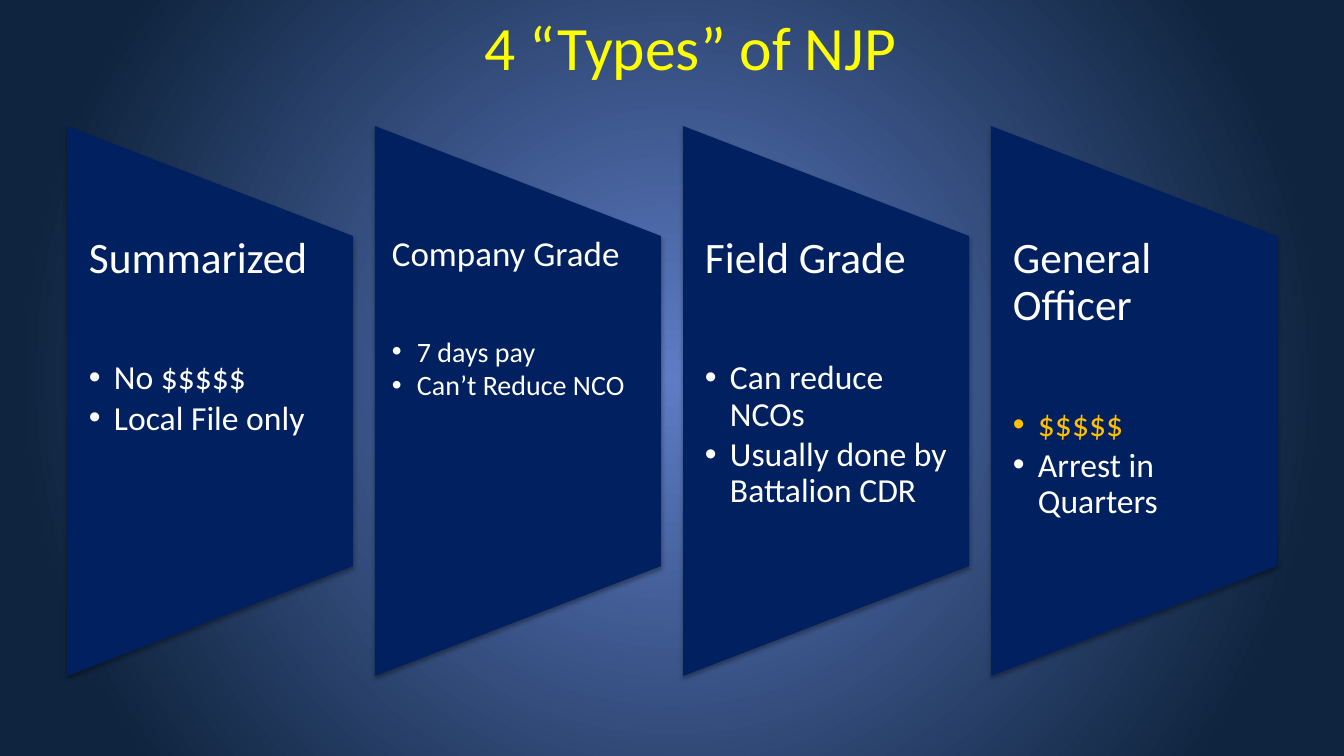
from lxml.etree import SubElement
from pptx import Presentation
from pptx.dml.color import RGBColor
from pptx.enum.shapes import MSO_SHAPE
from pptx.enum.text import MSO_ANCHOR, PP_ALIGN
from pptx.oxml import parse_xml
from pptx.oxml.ns import nsdecls, qn
from pptx.util import Pt

PX = 914400 / 100.8
COLORS = {
    "glow": "5E7CC5",
    "night": "0F243E",
    "panel": "002060",
    "title": "FFFF00",
    "text": "FFFFFF",
    "money": "FFC000",
}


def px(length):
    return round(length * PX)


def write(box, text, size, color="text", align=PP_ALIGN.LEFT, spacing=1.0, after=0, bullet=False):
    """Fill the first empty paragraph of a box, or append a new one."""
    frame = box.text_frame
    para = frame.paragraphs[0] if not frame.text else frame.add_paragraph()
    para.alignment = align
    para.line_spacing = spacing
    para.space_after = px(after)
    if bullet:
        properties = para._p.get_or_add_pPr()
        properties.set("marL", str(px(25)))
        properties.set("indent", str(px(-25)))
        SubElement(properties, qn("a:buFont"), typeface="Arial")
        SubElement(properties, qn("a:buChar"), char="•")
    span = para.add_run()
    span.text = text
    span.font.name = "Calibri"
    span.font.size = Pt(size)
    span.font.color.rgb = RGBColor.from_string(COLORS[color])


deck = Presentation()
deck.slide_width, deck.slide_height = px(1344), px(756)
page = deck.slides.add_slide(deck.slide_layouts[6])

# Background: radial glow from the centre
backdrop = page.background.fill
backdrop.gradient()
for stop, position, name in zip(backdrop.gradient_stops, (0, 0.85), ("glow", "night")):
    stop.position = position
    stop.color.rgb = RGBColor.from_string(COLORS[name])
gradient = page.element.find(".//" + qn("a:gradFill"))
gradient.replace(gradient.find(qn("a:lin")), parse_xml(
    f'<a:path {nsdecls("a")} path="circle">'
    '<a:fillToRect l="50000" t="50000" r="50000" b="50000"/></a:path>'))

# Title
title = page.shapes.add_textbox(px(111), 0, px(1159), px(91))
title.text_frame.word_wrap = True
title.text_frame.vertical_anchor = MSO_ANCHOR.MIDDLE
write(title, "4 “Types” of NJP", 44, color="title", align=PP_ALIGN.CENTER)

# Panels: heading, heading size, bullet size, inset, gap below heading, gap between bullets, bullets
PANELS = [
    ("Summarized", 31, 24, 22, 78, 4,
     [("No $$$$$", "text"), ("Local File only", "text")]),
    ("Company Grade", 25, 20, 17, 64, 3,
     [("7 days pay", "text"), ("Can’t Reduce NCO", "text")]),
    ("Field Grade", 31, 24, 22, 78, 4,
     [("Can reduce NCOs", "text"), ("Usually done by Battalion CDR", "text")]),
    ("General Officer", 31, 24, 22, 78, 4,
     [("$$$$$", "money"), ("Arrest in Quarters", "text")]),
]
LEFT, PITCH, MIDDLE = 67, 308, 401
WIDTH, HEIGHT, TEXT_HEIGHT = 286, 550, 330

for index, (heading, heading_size, bullet_size, inset, heading_gap, bullet_gap, bullets) in enumerate(PANELS):
    left = LEFT + index * PITCH

    # Width and height are swapped because the shape is turned a quarter
    panel = page.shapes.add_shape(
        MSO_SHAPE.FLOWCHART_MANUAL_OPERATION,
        px(left + (WIDTH - HEIGHT) // 2), px(MIDDLE - WIDTH // 2), px(HEIGHT), px(WIDTH))
    panel.rotation = 270
    panel.fill.solid()
    panel.fill.fore_color.rgb = RGBColor.from_string(COLORS["panel"])
    panel.line.fill.background()
    panel.shadow.inherit = False
    panel.element.spPr.find(qn("a:effectLst")).append(parse_xml(
        f'<a:outerShdw {nsdecls("a")} blurRad="{Pt(3.1)}" dist="{Pt(1.8)}" dir="5400000" '
        'rotWithShape="0"><a:srgbClr val="000000"><a:alpha val="35000"/></a:srgbClr></a:outerShdw>'))

    box = page.shapes.add_textbox(px(left), px(MIDDLE - TEXT_HEIGHT // 2), px(WIDTH), px(TEXT_HEIGHT))
    frame = box.text_frame
    frame.word_wrap = True
    frame.margin_left = frame.margin_right = px(inset)
    frame.margin_top = frame.margin_bottom = 0
    write(box, heading, heading_size, spacing=0.9, after=heading_gap)
    for text, color in bullets:
        write(box, text, bullet_size, color=color, spacing=0.9, after=bullet_gap, bullet=True)

deck.save("out.pptx")
